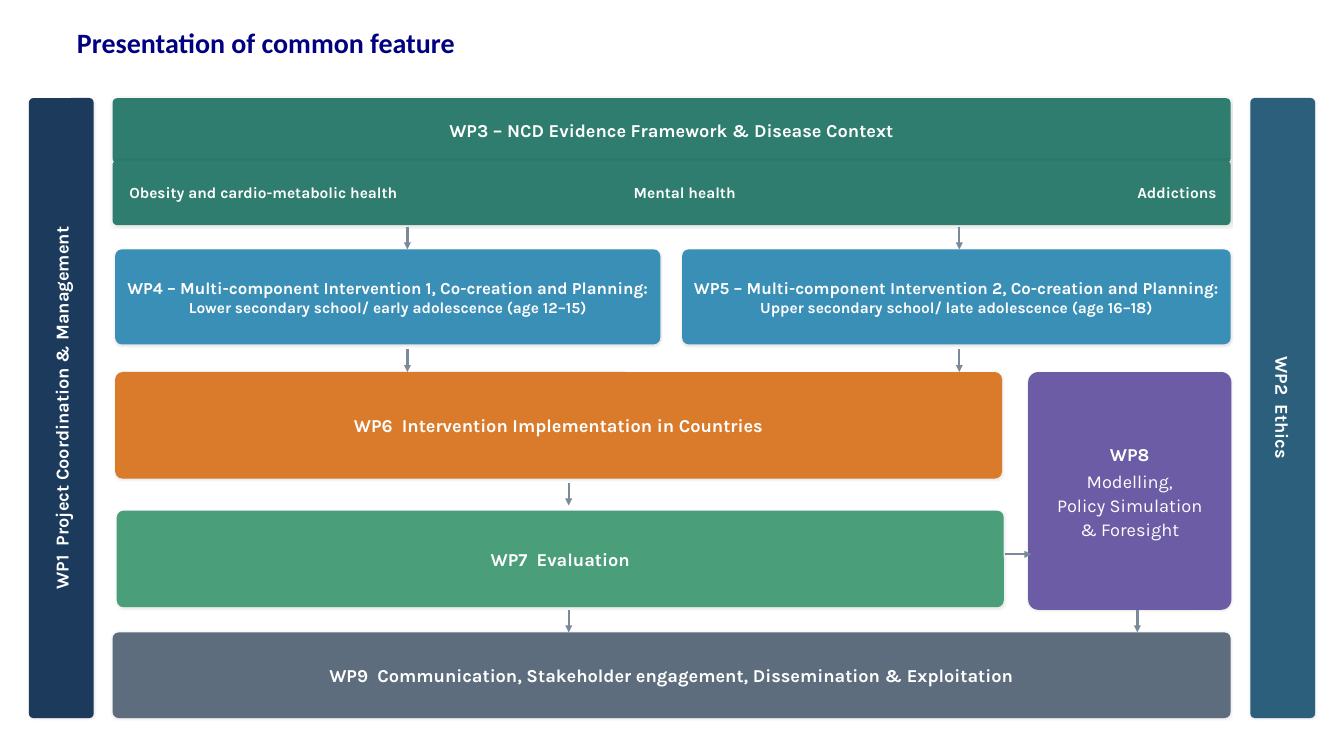
from collections import namedtuple
from pptx import Presentation
from pptx.dml.color import RGBColor
from pptx.enum.shapes import MSO_CONNECTOR, MSO_SHAPE
from pptx.enum.text import MSO_ANCHOR, PP_ALIGN
from pptx.oxml.ns import qn
from pptx.util import Pt
from lxml.etree import SubElement

COLORS = {
    "title": "000080", "white": "FFFFFF", "arrow": "7A8A9A", "shade": "000000",
    "manage": "1B3A5C", "ethics": "2C5F7C", "evidence": "2E7D6F",
    "plan": "3A8FB7", "rollout": "D97B2B", "review": "4A9E7A",
    "model": "6B5CA5", "outreach": "5D6D7E",
}
Box = namedtuple("Box", "x y w h")
GAP = 19.4


def color(name):
    return RGBColor.from_string(COLORS[name])


def inner(box, x, y, w, h):
    """Return a box placed relative to the corner of another."""
    return Box(box.x + x, box.y + y, w, h)


def style(run, size, bold=True, name="Karla", ink="white"):
    font = run.font
    font.name, font.size, font.bold = name, Pt(size), bold
    font.color.rgb = color(ink)


def shade(shape):
    """Give the shape a faint shadow just below it."""
    shape.shadow.inherit = False
    effects = shape._element.spPr.find(qn("a:effectLst"))
    outer = SubElement(effects, qn("a:outerShdw"), blurRad=str(Pt(2)),
                       dist=str(Pt(0.5)), dir="5400000", algn="t", rotWithShape="0")
    ink = SubElement(outer, qn("a:srgbClr"), val=COLORS["shade"])
    SubElement(ink, qn("a:alpha"), val="10000")


def card(slide, box, text, fill, sizes=(15.6,), turn=0):
    """Draw a rounded card; sizes holds one text size per line."""
    shape = slide.shapes.add_shape(MSO_SHAPE.ROUNDED_RECTANGLE, *map(Pt, box))
    shape.adjustments[0] = 0.07
    shape.rotation = turn
    shape.fill.solid()
    shape.fill.fore_color.rgb = color(fill)
    shape.line.fill.background()
    shade(shape)
    frame = shape.text_frame
    frame.word_wrap = True
    frame.vertical_anchor = MSO_ANCHOR.MIDDLE
    frame.margin_left = frame.margin_right = Pt(5)
    frame.margin_top = frame.margin_bottom = Pt(3)
    para = frame.paragraphs[0]
    para.text = text
    para.alignment = PP_ALIGN.CENTER
    for run, size in zip(para.runs, sizes):
        style(run, size)
    return shape


def arrow(slide, box, x, y, dx=0, dy=GAP):
    ends = box.x + x, box.y + y, box.x + x + dx, box.y + y + dy
    link = slide.shapes.add_connector(MSO_CONNECTOR.STRAIGHT, *map(Pt, ends))
    link.line.color.rgb = color("arrow")
    link.line.width = Pt(2)
    SubElement(link.line._get_or_add_ln(), qn("a:tailEnd"), type="triangle")
    SubElement(link._element.spPr, qn("a:effectLst"))


def title(slide, box, text):
    frame = slide.shapes.add_textbox(*map(Pt, box)).text_frame
    frame.word_wrap = True
    frame.vertical_anchor = MSO_ANCHOR.BOTTOM
    frame.margin_left = frame.margin_right = 0
    frame.margin_top = frame.margin_bottom = 0
    para = frame.paragraphs[0]
    para.text = text
    para.line_spacing = Pt(55.5)
    style(para.runs[0], 24, name="Calibri", ink="title")


def side(slide, box, text, fill, turn):
    """Fill an upright box with a card turned on its side."""
    flat = inner(box, (box.w - box.h) / 2, (box.h - box.w) / 2, box.h, box.w)
    card(slide, flat, text, fill, turn=turn)


def evidence(slide, box):
    card(slide, inner(box, 0, 0, box.w, 55.5),
         "WP3 – NCD Evidence Framework & Disease Context", "evidence")
    topics = card(slide, inner(box, 0, 53.3, box.w, 55.5),
                  "Obesity and cardio-metabolic health\tMental health\tAddictions",
                  "evidence", (13.2,))
    topics.text_frame.margin_left = Pt(13.2)
    para = topics.text_frame.paragraphs[0]
    para.alignment = PP_ALIGN.LEFT
    tabs = SubElement(para._p.get_or_add_pPr(), qn("a:tabLst"))
    for stop, side_of in ((476, "ctr"), (932, "r")):
        SubElement(tabs, qn("a:tab"), pos=str(Pt(stop)), algn=side_of)


def planning(slide, box):
    plans = (
        (2.2, 467.3, 252.7, "WP4 – Multi-component Intervention 1, Co-creation and Planning:"
         "\vLower secondary school/ early adolescence (age 12–15)"),
        (488.2, 470.2, 725.8, "WP5 – Multi-component Intervention 2, Co-creation and Planning:"
         "\vUpper secondary school/ late adolescence (age 16–18)"),
    )
    for x, width, mid, text in plans:
        card(slide, inner(box, x, GAP, width, 81.4), text, "plan", (14.4, 13.2))
        arrow(slide, box, mid, 0)
        arrow(slide, box, mid, 105.1)


def model(slide, box):
    shape = card(slide, box, "WP8", "model")
    shape.adjustments[0] = 0.05
    frame = shape.text_frame
    for text in ("Modelling,", "Policy Simulation", "& Foresight"):
        para = frame.add_paragraph()
        para.text = text
        para.alignment = PP_ALIGN.CENTER
        style(para.runs[0], 15.6, bold=False)
    frame.paragraphs[1].space_before = Pt(2.4)
    for para in frame.paragraphs:
        para.line_spacing = 1.1


def delivery(slide, box):
    card(slide, inner(box, 2.2, 0, 760.3, 91.4),
         "WP6  Intervention Implementation in Countries", "rollout")
    card(slide, inner(box, 3.6, 118.8, 760.3, 82.8), "WP7  Evaluation", "review")
    model(slide, inner(box, 784.8, 0, 174.2, 203.8))
    card(slide, inner(box, 0, 223.2, box.w, 73.4),
         "WP9  Communication, Stakeholder engagement, Dissemination & Exploitation",
         "outreach")
    for x, y in ((391, 95), (391, 203.8), (878.4, 203.8)):
        arrow(slide, box, x, y)
    arrow(slide, box, 764.6, 156.2, 23, 0)


def main():
    deck = Presentation()
    deck.slide_width, deck.slide_height = Pt(1152), Pt(648)
    slide = deck.slides.add_slide(deck.slide_layouts[6])
    title(slide, Box(66, 16.5, 1020, 34), "Presentation of common feature")
    side(slide, Box(24.8, 84, 55.5, 531.5),
         "WP1  Project Coordination & Management", "manage", 270)
    side(slide, Box(1071.7, 84, 55.5, 531.5), "WP2  Ethics", "ethics", 90)
    body = Box(96.5, 84.2, 958.3, 531.3)
    evidence(slide, inner(body, 0, 0, body.w, 108.8))
    planning(slide, inner(body, 0, 110.2, body.w, 124.5))
    delivery(slide, inner(body, 0, 234.7, body.w, 296.6))
    deck.save("out.pptx")


if __name__ == "__main__":
    main()
